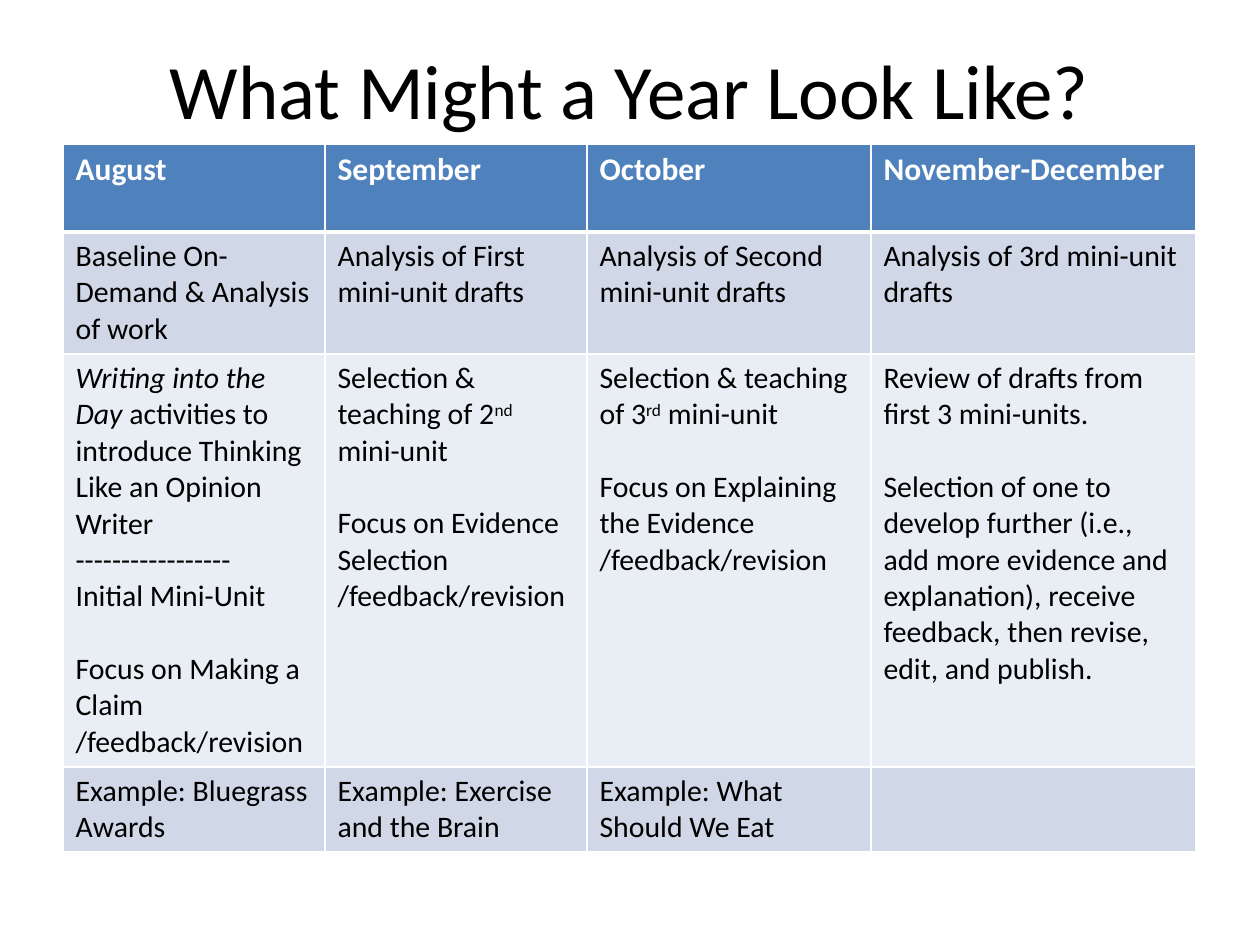
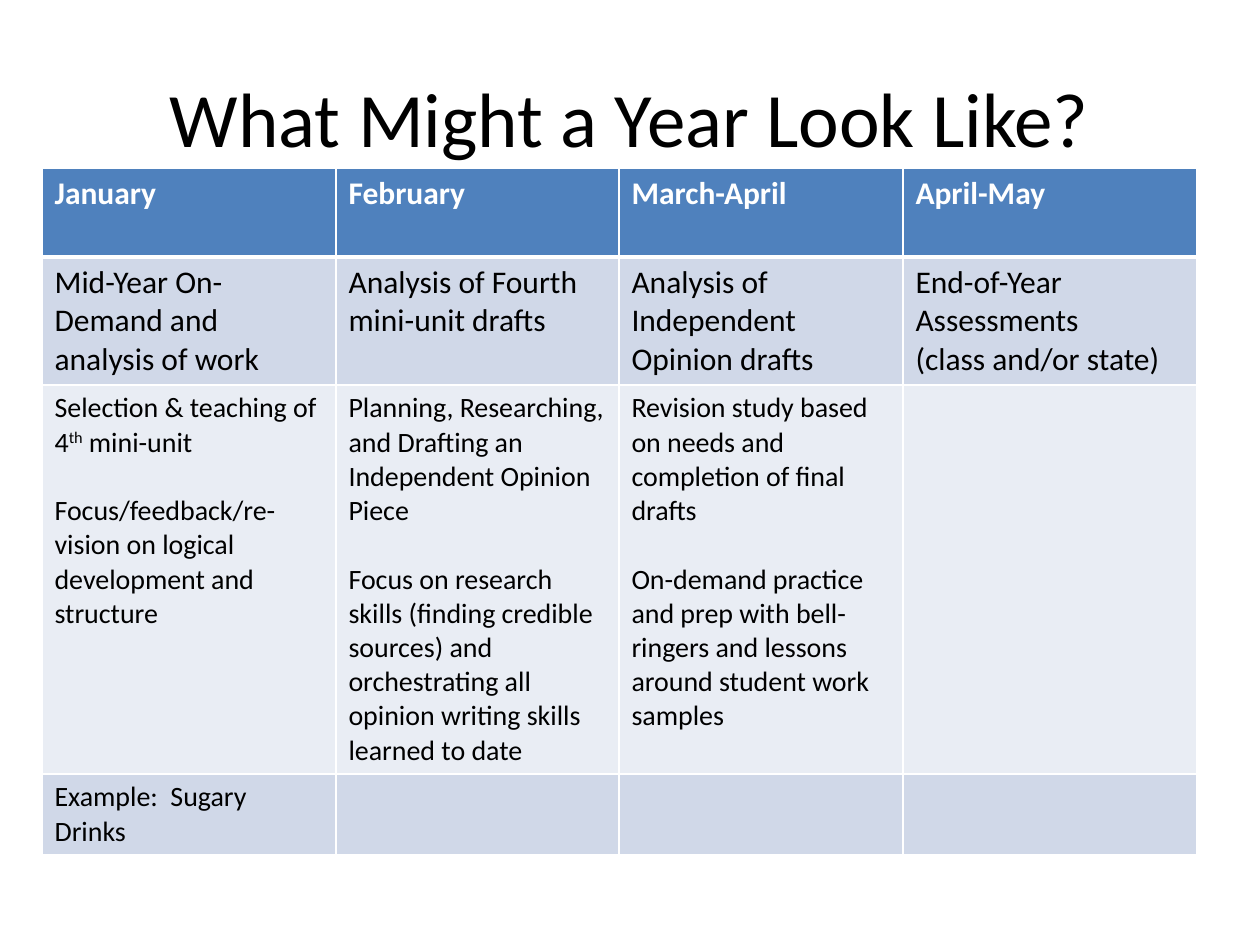
"""Builds two slides with the writing plan of a school year as tables."""
from lxml.etree import SubElement
from pptx import Presentation
from pptx.dml.color import RGBColor
from pptx.enum.text import MSO_ANCHOR, PP_ALIGN
from pptx.oxml.ns import qn
from pptx.util import Emu, Pt

PX = 914400 / 126
FONT = "Calibri"
BLACK, WHITE = "000000", "FFFFFF"
ROW_FILLS = ["4F81BD", "D0D8E8", "E9EDF4", "D0D8E8"]
TITLE = "What Might a Year Look Like?"

# In cells: *italic*, ^superscript^, a blank line for a paragraph gap.
TERMS = [
    {
        "title_top": 10,
        "table_at": (63, 144),
        "columns": [262, 262, 284, 325],
        "rows": [88, 122, 413, 85],
        "sizes": [18, 17, 17, 17],
        "cells": [
            ["August", "September", "October", "November-December"],
            ["Baseline On-Demand & Analysis of work",
             "Analysis of First mini-unit drafts",
             "Analysis of Second mini-unit drafts",
             "Analysis of 3rd mini-unit drafts"],
            ["*Writing into the Day *activities to introduce Thinking Like an Opinion Writer\n"
             "-----------------\nInitial Mini-Unit\n\n"
             "Focus on Making a Claim\n/feedback/revision",
             "Selection & teaching of 2^nd^ mini-unit\n\n"
             "Focus on Evidence Selection\n/feedback/revision",
             "Selection & teaching of 3^rd^ mini-unit\n\n"
             "Focus on Explaining the Evidence\n/feedback/revision",
             "Review of drafts from first 3 mini-units.\n\n"
             "Selection of one to develop further (i.e., add more evidence and "
             "explanation), receive feedback, then revise, edit, and publish."],
            ["Example: Bluegrass Awards", "Example: Exercise and the Brain",
             "Example: What Should We Eat", ""],
        ],
    },
    {
        "title_top": 38,
        "table_at": (42, 168),
        "columns": [294, 283, 284, 294],
        "rows": [89, 128, 389, 81],
        "sizes": [18, 18, 16, 16],
        "cells": [
            ["January", "February", "March-April", "April-May"],
            ["Mid-Year On-Demand and analysis of work",
             "Analysis of Fourth mini-unit drafts",
             "Analysis of Independent Opinion drafts",
             "End-of-Year Assessments\n(class and/or state)"],
            ["Selection & teaching of 4^th^ mini-unit\n\n"
             "Focus/feedback/re-vision on logical development and structure",
             "Planning, Researching, and Drafting an Independent Opinion Piece\n\n"
             "Focus on research skills (finding credible sources) and "
             "orchestrating all opinion writing skills learned to date",
             "Revision study based on needs and completion of final drafts\n\n"
             "On-demand practice and prep with bell-ringers and lessons "
             "around student work samples",
             ""],
            ["Example:  Sugary Drinks", "", "", ""],
        ],
    },
]


def px(length):
    return Emu(round(length * PX))


def color(hex_string):
    return RGBColor.from_string(hex_string)


def style(para, size, hex_string, bold=False):
    font = para.font
    font.name, font.size, font.bold = FONT, Pt(size), bold
    font.color.rgb = color(hex_string)


def add_title(page, top):
    box = page.shapes.add_textbox(px(63), px(top), px(1134), px(158))
    frame = box.text_frame
    frame.word_wrap = True
    frame.vertical_anchor = MSO_ANCHOR.MIDDLE
    para = frame.paragraphs[0]
    para.text = TITLE
    para.alignment = PP_ALIGN.CENTER
    style(para, 44, BLACK)


def add_spans(para, text):
    for i, part in enumerate(text.split("*")):
        for j, piece in enumerate(part.split("^")):
            if piece:
                span = para.add_run()
                span.text = piece
                if i % 2:
                    span.font.italic = True
                if j % 2:
                    span.font._element.set("baseline", "30000")


def fill_text(cell, text, size, hex_string, bold):
    frame = cell.text_frame
    gap = False
    para = None
    for line in text.split("\n"):
        if not line:
            gap = True
            continue
        para = frame.add_paragraph() if para else frame.paragraphs[0]
        style(para, size, hex_string, bold)
        if gap:
            para.space_before = Pt(round(size * 1.22, 1))
        gap = False
        add_spans(para, line)


def add_borders(cell, row):
    properties = cell._tc.get_or_add_tcPr()
    for side in "LRTB":
        thick = (row, side) in [(0, "B"), (1, "T")]
        line = SubElement(properties, qn(f"a:ln{side}"), w=str(Pt(3 if thick else 1)))
        SubElement(SubElement(line, qn("a:solidFill")), qn("a:srgbClr"), val=WHITE)


def add_plan(page, term):
    columns, rows = term["columns"], term["rows"]
    left, top = term["table_at"]
    table = page.shapes.add_table(len(rows), len(columns), px(left), px(top),
                                  px(sum(columns)), px(sum(rows))).table
    for column, width in zip(table.columns, columns):
        column.width = px(width)
    for r, (height, size, texts) in enumerate(zip(rows, term["sizes"], term["cells"])):
        table.rows[r].height = px(height)
        for c, text in enumerate(texts):
            cell = table.cell(r, c)
            add_borders(cell, r)
            cell.fill.solid()
            cell.fill.fore_color.rgb = color(ROW_FILLS[r])
            fill_text(cell, text, size, BLACK if r else WHITE, bold=r == 0)


def main():
    deck = Presentation()
    deck.slide_width, deck.slide_height = px(1260), px(945)
    for term in TERMS:
        page = deck.slides.add_slide(deck.slide_layouts[6])
        add_title(page, term["title_top"])
        add_plan(page, term)
    deck.save("out.pptx")


if __name__ == "__main__":
    main()
